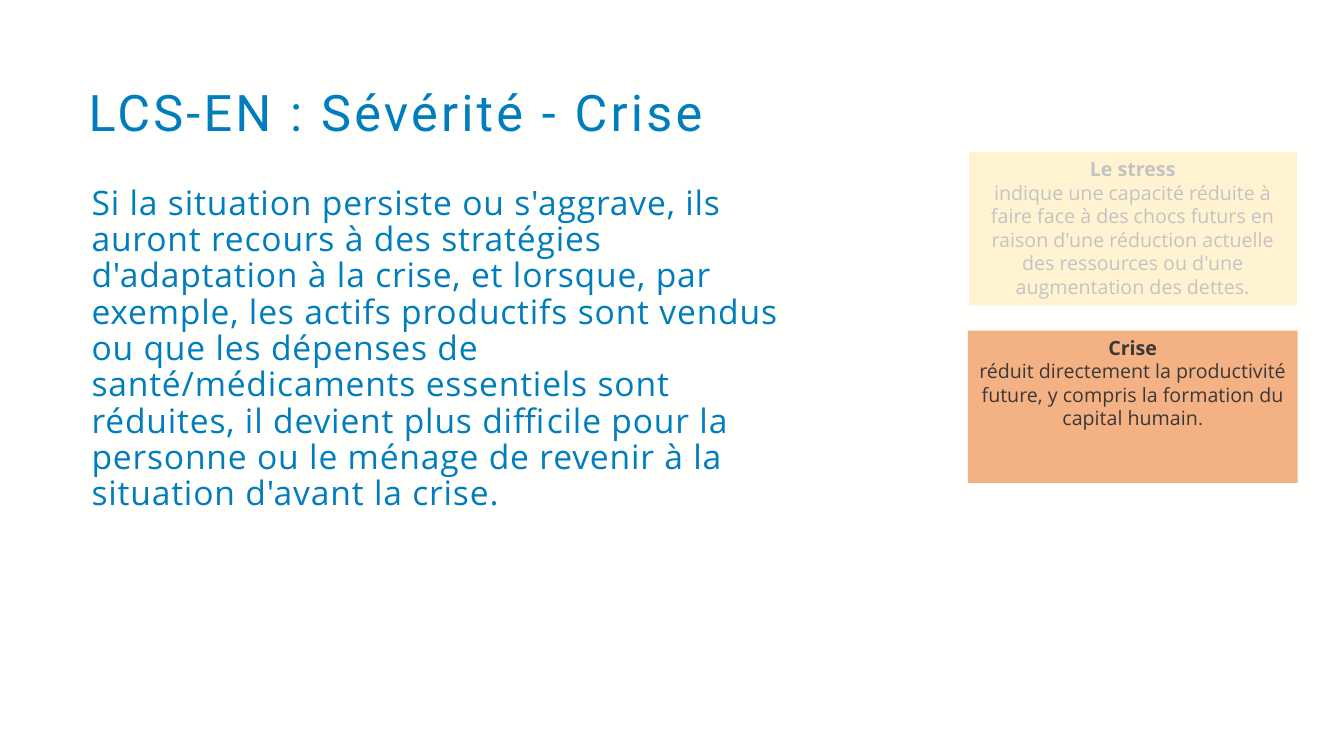
import dataclasses

import pptx
import pptx.dml.color
import pptx.enum.shapes
import pptx.enum.text
import pptx.oxml.ns
import pptx.util
from lxml import etree

EMU_PER_PX = 9144  # 100 px to the inch
LEFT = pptx.enum.text.PP_ALIGN.LEFT
CENTER = pptx.enum.text.PP_ALIGN.CENTER
TOP = pptx.enum.text.MSO_ANCHOR.TOP
MIDDLE = pptx.enum.text.MSO_ANCHOR.MIDDLE


@dataclasses.dataclass(frozen=True)
class Theme:
    background: str = "FFFFFE"
    blue: str = "007DBC"
    dark: str = "3B3838"
    stress: str = "FFD966"
    crisis: str = "F4B183"
    veil: str = "FFFFFF"
    title_font: str = "Roboto"
    body_font: str = "Open Sans"
    stop_font: str = "Calibri"
    title_size: int = 36
    body_size: int = 24
    card_size: int = 14


THEME = Theme()


def px(value):
    return pptx.util.Emu(value * EMU_PER_PX)


def rgb(value):
    return pptx.dml.color.RGBColor.from_string(value)


def style_paragraph(paragraph, name, size, color, alignment, bold=False):
    paragraph.alignment = alignment
    font = paragraph.font
    font.name = name
    font.size = pptx.util.Pt(size)
    font.color.rgb = rgb(color)
    font.bold = bold


def fill_text(shape, text, name, size, anchor, spacing):
    """Write one blue, left-aligned paragraph; spacing is in points."""
    frame = shape.text_frame
    frame.word_wrap = True
    frame.auto_size = pptx.enum.text.MSO_AUTO_SIZE.NONE
    frame.vertical_anchor = anchor
    paragraph = frame.paragraphs[0]
    run = paragraph.add_run()
    run.text = text
    paragraph.line_spacing = 0.9
    style_paragraph(paragraph, name, size, THEME.blue, LEFT)
    run._r.get_or_add_rPr().set("spc", str(round(spacing * 100)))


def add_title(slide, text, left, top, width, height):
    title = slide.shapes.title
    title.left, title.top, title.width, title.height = map(px, (left, top, width, height))
    fill_text(title, text, THEME.title_font, THEME.title_size, MIDDLE, 2.3)


def add_body(slide, text, left, top, width, height):
    box = slide.shapes.add_textbox(px(left), px(top), px(width), px(height))
    fill_text(box, text, THEME.body_font, THEME.body_size, TOP, 0.6)


def add_rectangle(slide, color, left, top, width, height):
    shape = slide.shapes.add_shape(
        pptx.enum.shapes.MSO_SHAPE.RECTANGLE, px(left), px(top), px(width), px(height))
    shape.shadow.inherit = False
    shape.fill.solid()
    shape.fill.fore_color.rgb = rgb(color)
    shape.line.fill.background()
    return shape


def add_card(slide, heading, pieces, color, left, top, width, height):
    """Add a severity card; pieces are (text, font name or None) pairs."""
    card = add_rectangle(slide, color, left, top, width, height)
    frame = card.text_frame
    frame.word_wrap = True
    frame.vertical_anchor = TOP
    paragraphs = frame.paragraphs[0], frame.add_paragraph()
    for paragraph, runs in zip(paragraphs, ([(heading, None)], pieces)):
        for text, font_name in runs:
            run = paragraph.add_run()
            run.text = text
            if font_name:
                run.font.name = font_name
        style_paragraph(paragraph, THEME.body_font, THEME.card_size, THEME.dark,
                        CENTER, bold=paragraph is paragraphs[0])


def add_veil(slide, left, top, width, height, opacity):
    """Lay a translucent sheet over a card; opacity is in percent."""
    veil = add_rectangle(slide, THEME.veil, left, top, width, height)
    color = veil._element.spPr.find(
        f"{pptx.oxml.ns.qn('a:solidFill')}/{pptx.oxml.ns.qn('a:srgbClr')}")
    etree.SubElement(color, pptx.oxml.ns.qn("a:alpha")).set("val", str(opacity * 1000))
    veil.line.color.rgb = rgb(THEME.veil)
    veil.line.width = pptx.util.Pt(1)


def main():
    presentation = pptx.Presentation()
    presentation.slide_width, presentation.slide_height = px(1333), px(750)
    slide = presentation.slides.add_slide(presentation.slide_layouts.get_by_name("Title Only"))
    slide.background.fill.solid()
    slide.background.fill.fore_color.rgb = rgb(THEME.background)

    # Title and explanation
    add_title(slide, "LCS-EN : Sévérité - Crise", 78, 78, 1209, 72)
    add_body(
        slide,
        "Si la situation persiste ou s'aggrave, ils auront recours à des stratégies "
        "d'adaptation à la crise, et lorsque, par exemple, les actifs productifs sont "
        "vendus ou que les dépenses de santé/médicaments essentiels sont réduites, il "
        "devient plus difficile pour la personne ou le ménage de revenir à la situation "
        "d'avant la crise.",
        81, 180, 736, 427)

    # Severity cards, the first one dimmed
    card_left, card_width = 960, 327
    add_card(
        slide, "Le stress",
        [("indique une capacité réduite à faire face à des chocs futurs en raison d'une "
          "réduction actuelle des ressources ou d'une augmentation des dettes.", None)],
        THEME.stress, card_left, 151, card_width, 152)
    add_card(
        slide, "Crise",
        [("réduit directement la productivité future, y compris la formation du capital "
          "humain", None), (".", THEME.stop_font)],
        THEME.crisis, card_left, 328, card_width, 151)
    add_veil(slide, card_left, 147, card_width, 157, opacity=70)

    presentation.save("out.pptx")


if __name__ == "__main__":
    main()
